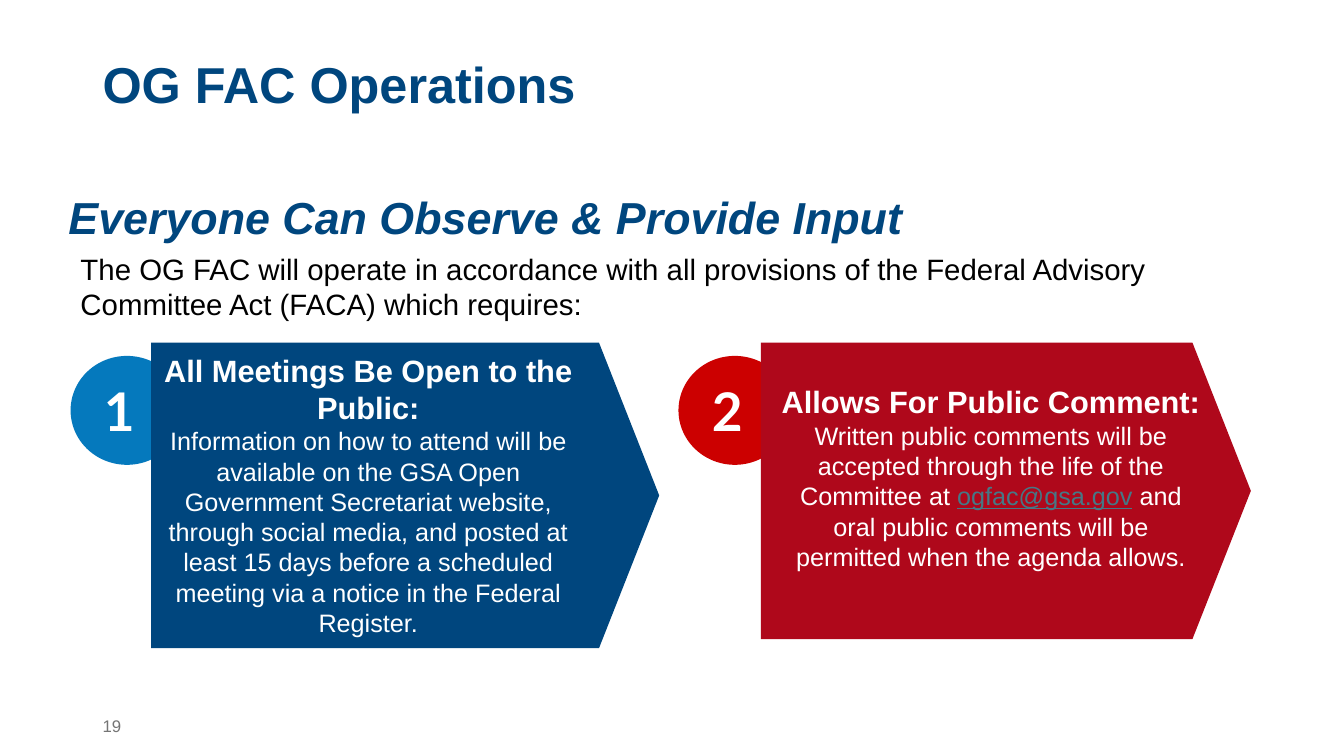
from dataclasses import dataclass

from pptx import Presentation
from pptx.dml.color import RGBColor
from pptx.enum.shapes import MSO_SHAPE as Preset
from pptx.enum.text import MSO_ANCHOR as Anchor, PP_ALIGN as Align
from pptx.util import Pt


@dataclass(frozen=True)
class Theme:
    font: str = "Arial"
    number_font: str = "Lato"
    navy: str = "00467E"
    blue: str = "0579BD"
    red: str = "CC0000"
    crimson: str = "AF081B"
    white: str = "FFFFFF"
    black: str = "000000"
    gray: str = "757575"
    link: str = "467886"
    title_size: int = 36
    heading_size: int = 32
    intro_size: int = 21
    number_size: int = 38
    card_heading_size: int = 22
    card_body_size: int = 18
    page_size: int = 12


THEME = Theme()
TITLE = "OG FAC Operations"
HEADING = "Everyone Can Observe & Provide Input"
INTRO = (
    "The OG FAC will operate in accordance with all provisions of the "
    "Federal Advisory Committee Act (FACA) which requires:"
)
PAGE_NUMBER = "19"
LINK = {"color": THEME.link, "underline": True}
CARDS = [
    {
        "number": "1",
        "heading": "All Meetings Be Open to the Public:",
        "body": [(
            "Information on how to attend will be available on the GSA Open "
            "Government Secretariat website, through social media, and posted "
            "at least 15 days before a scheduled meeting via a notice in the "
            "Federal Register.", {})],
        "circle_color": THEME.blue,
        "arrow_color": THEME.navy,
        "circle_left": 50.4,
        "arrow": (108, 244.8, 362.9, 218.2),
        "text_box": (109.4, 272.2, 307.4, 162),
    },
    {
        "number": "2",
        "heading": "Allows For Public Comment:",
        "body": [
            ("Written public comments will be accepted through the life of "
             "the Committee at ", {}),
            ("ogfac@gsa.gov", LINK),
            (" and oral public comments will be permitted when the agenda "
             "allows.", {}),
        ],
        "circle_color": THEME.red,
        "arrow_color": THEME.crimson,
        "circle_left": 484.6,
        "arrow": (543.6, 244.8, 349.9, 211.7),
        "text_box": (557.3, 259.9, 301, 162),
    },
]
CIRCLE_TOP, CIRCLE_WIDTH, CIRCLE_HEIGHT = 254.2, 80.6, 77.8
NUMBER_INDENT, NUMBER_TOP, NUMBER_WIDTH, NUMBER_HEIGHT = 10.8, 266.4, 48.2, 53.3
ARROW_POINT = 0.197


def add_run(paragraph, text, size=18, color=THEME.black, font=THEME.font,
            bold=False, italic=False, underline=False):
    run = paragraph.add_run()
    run.text = text
    run.font.name = font
    run.font.size = Pt(size)
    run.font.bold = bold
    run.font.italic = italic
    run.font.underline = underline
    run.font.color.rgb = RGBColor.from_string(color)


def add_text(slide, box, paragraphs, anchor=Anchor.TOP, align=Align.LEFT,
             margins=(0, 0), line_spacing=None, **run_format):
    frame = slide.shapes.add_textbox(*map(Pt, box)).text_frame
    frame.word_wrap = True
    frame.vertical_anchor = anchor
    frame.margin_left = frame.margin_right = Pt(margins[0])
    frame.margin_top = frame.margin_bottom = Pt(margins[1])
    for index, runs in enumerate(paragraphs):
        paragraph = frame.add_paragraph() if index else frame.paragraphs[0]
        paragraph.alignment = align
        if line_spacing:
            paragraph.line_spacing = line_spacing
        for text, changes in runs:
            add_run(paragraph, text, **{**run_format, **changes})


def add_preset(slide, preset, box, color):
    shape = slide.shapes.add_shape(preset, *map(Pt, box))
    shape.shadow.inherit = False
    shape.fill.solid()
    shape.fill.fore_color.rgb = RGBColor.from_string(color)
    shape.line.fill.background()
    return shape


def add_card(slide, card):
    left = card["circle_left"]
    add_preset(slide, Preset.OVAL,
               (left, CIRCLE_TOP, CIRCLE_WIDTH, CIRCLE_HEIGHT),
               card["circle_color"])
    add_text(slide,
             (left + NUMBER_INDENT, NUMBER_TOP, NUMBER_WIDTH, NUMBER_HEIGHT),
             [[(card["number"], {})]], anchor=Anchor.MIDDLE, align=Align.CENTER,
             size=THEME.number_size, font=THEME.number_font,
             color=THEME.white, bold=True)
    arrow = add_preset(slide, Preset.PENTAGON, card["arrow"], card["arrow_color"])
    arrow.adjustments[0] = ARROW_POINT
    heading = (card["heading"], {"size": THEME.card_heading_size, "bold": True})
    add_text(slide, card["text_box"], [[heading], card["body"]],
             anchor=Anchor.MIDDLE, align=Align.CENTER,
             size=THEME.card_body_size, color=THEME.white)


def main():
    presentation = Presentation()
    presentation.slide_width, presentation.slide_height = Pt(960), Pt(540)
    slide = presentation.slides.add_slide(presentation.slide_layouts[6])
    add_text(slide, (66.2, 504, 46.8, 28.8), [[(PAGE_NUMBER, {})]],
             anchor=Anchor.MIDDLE, margins=(7.2, 3.6),
             size=THEME.page_size, color=THEME.gray)
    add_text(slide, (66.2, 24.5, 828, 75.6), [[(TITLE, {})]],
             anchor=Anchor.MIDDLE, margins=(7.2, 3.6), line_spacing=0.9,
             size=THEME.title_size, color=THEME.navy, bold=True)
    add_text(slide, (41.8, 122.4, 843.1, 41), [[(HEADING, {})]],
             margins=(7.2, 7.2), line_spacing=1.15,
             size=THEME.heading_size, color=THEME.navy, bold=True, italic=True)
    add_text(slide, (50.4, 175.7, 795.6, 82.8), [[(INTRO, {})]],
             margins=(7.2, 3.6), size=THEME.intro_size)
    for card in CARDS:
        add_card(slide, card)
    presentation.save("out.pptx")


if __name__ == "__main__":
    main()
